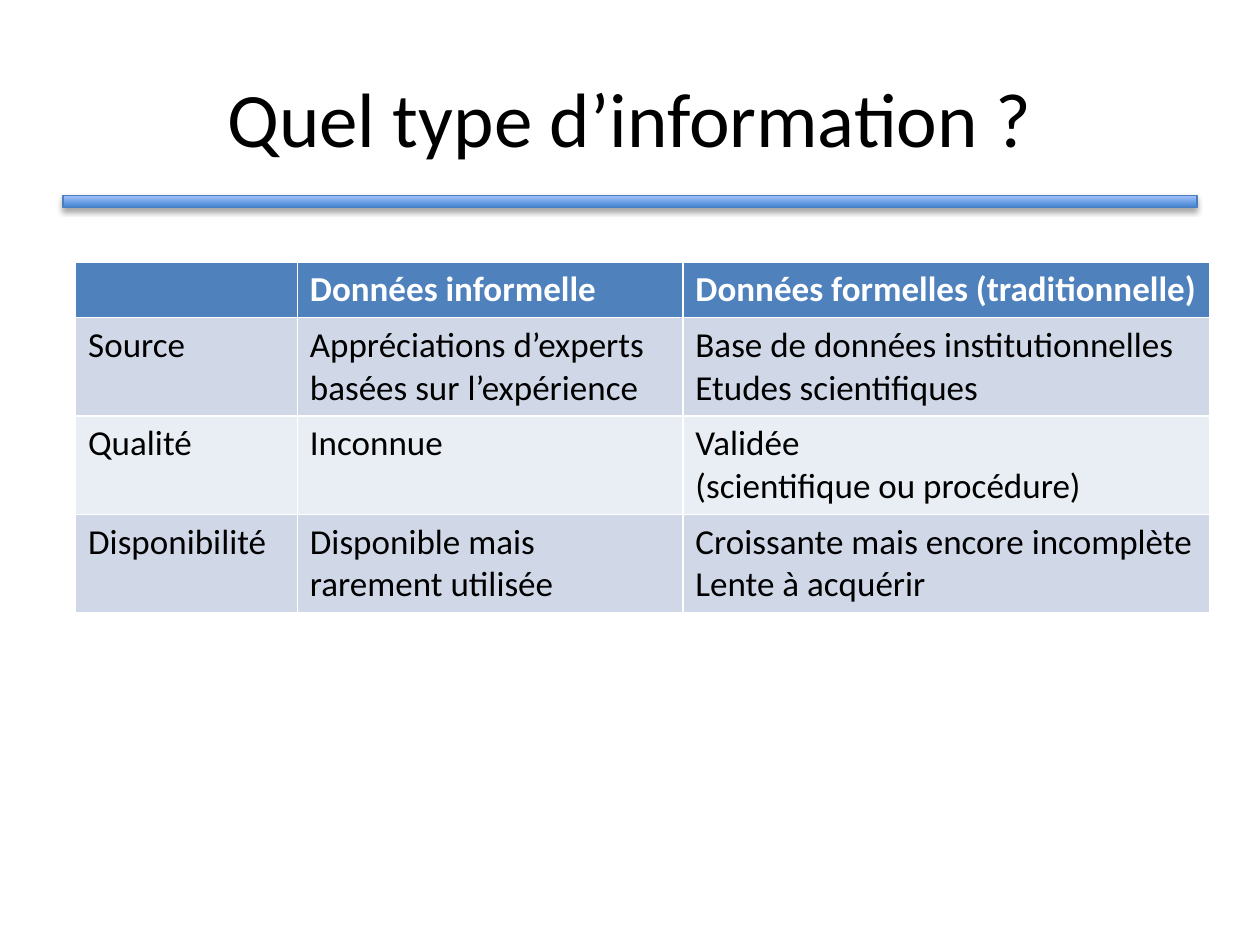
from dataclasses import dataclass

from lxml import etree
from pptx import Presentation
from pptx.dml.color import RGBColor as RGB
from pptx.enum.shapes import MSO_SHAPE as Shape
from pptx.enum.text import MSO_ANCHOR as Anchor, PP_ALIGN as Align
from pptx.oxml.ns import qn
from pptx.util import Inches, Pt

TITLE = "Quel type d’information ?"
ROWS = [
    ("", "Données informelle", "Données formelles (traditionnelle)"),
    ("Source", "Appréciations d’experts basées sur l’expérience",
     "Base de données institutionnelles\nEtudes scientifiques"),
    ("Qualité", "Inconnue", "Validée\n(scientifique ou procédure)"),
    ("Disponibilité", "Disponible mais rarement utilisée",
     "Croissante mais encore incomplète\nLente à acquérir"),
]
COLUMN_WIDTHS = (1.76, 3.06, 4.18)
HEADER_HEIGHT, BODY_HEIGHT = 0.43, 0.78


@dataclass(frozen=True)
class Theme:
    font: str = "Calibri"
    title_size: int = 44
    table_size: int = 20
    text: str = "000000"
    header_text: str = "FFFFFF"
    header_fill: str = "4F81BD"
    bands: tuple = ("D0D8E8", "E9EDF4")
    bar_gradient: tuple = ("3F80CE", "A4C4FF")
    bar_line: str = "4B7EBC"
    shadow: str = "000000"


THEME = Theme()


def style_text(frame, size, color, bold=False):
    for para in frame.paragraphs:
        for span in para.runs:
            span.font.name = THEME.font
            span.font.size = Pt(size)
            span.font.bold = bold
            span.font.color.rgb = RGB.from_string(color)


def add_drop_shadow(shape):
    shape.shadow.inherit = False
    effects = shape._element.spPr.find(qn("a:effectLst"))
    shadow = etree.SubElement(effects, qn("a:outerShdw"), blurRad=str(Pt(3.1)),
                              dist=str(Pt(1.8)), dir="5400000", rotWithShape="0")
    color = etree.SubElement(shadow, qn("a:srgbClr"), val=THEME.shadow)
    etree.SubElement(color, qn("a:alpha"), val="35000")


def add_bar(page):
    bar = page.shapes.add_shape(Shape.RECTANGLE, Inches(0.5), Inches(1.55),
                                Inches(9), Inches(0.1))
    bar.fill.gradient()
    bar.fill.gradient_angle = 90
    for stop, color in zip(bar.fill.gradient_stops, THEME.bar_gradient):
        stop.color.rgb = RGB.from_string(color)
    bar.line.color.rgb = RGB.from_string(THEME.bar_line)
    bar.line.width = Pt(0.75)
    add_drop_shadow(bar)


def add_title(page):
    title = page.shapes.title
    title.left, title.top = Inches(0.5), Inches(0.3)
    title.width, title.height = Inches(9), Inches(1.25)
    frame = title.text_frame
    frame.text = TITLE
    frame.vertical_anchor = Anchor.MIDDLE
    frame.paragraphs[0].alignment = Align.CENTER
    style_text(frame, THEME.title_size, THEME.text)


def add_comparison_table(page):
    heights = [HEADER_HEIGHT] + [BODY_HEIGHT] * (len(ROWS) - 1)
    table = page.shapes.add_table(
        len(ROWS), len(COLUMN_WIDTHS), Inches(0.6), Inches(2.08),
        Inches(sum(COLUMN_WIDTHS)), Inches(sum(heights))).table
    for column, width in zip(table.columns, COLUMN_WIDTHS):
        column.width = Inches(width)
    for index, (texts, height) in enumerate(zip(ROWS, heights)):
        header = index == 0
        fill = THEME.header_fill if header else THEME.bands[(index - 1) % 2]
        color = THEME.header_text if header else THEME.text
        table.rows[index].height = Inches(height)
        for cell, text in zip(table.rows[index].cells, texts):
            cell.fill.solid()
            cell.fill.fore_color.rgb = RGB.from_string(fill)
            cell.text_frame.text = text
            style_text(cell.text_frame, THEME.table_size, color, bold=header)


def main():
    deck = Presentation()
    deck.slide_width, deck.slide_height = Inches(10), Inches(7.5)
    page = deck.slides.add_slide(deck.slide_layouts[5])
    add_bar(page)
    add_title(page)
    add_comparison_table(page)
    deck.save("out.pptx")


if __name__ == "__main__":
    main()
